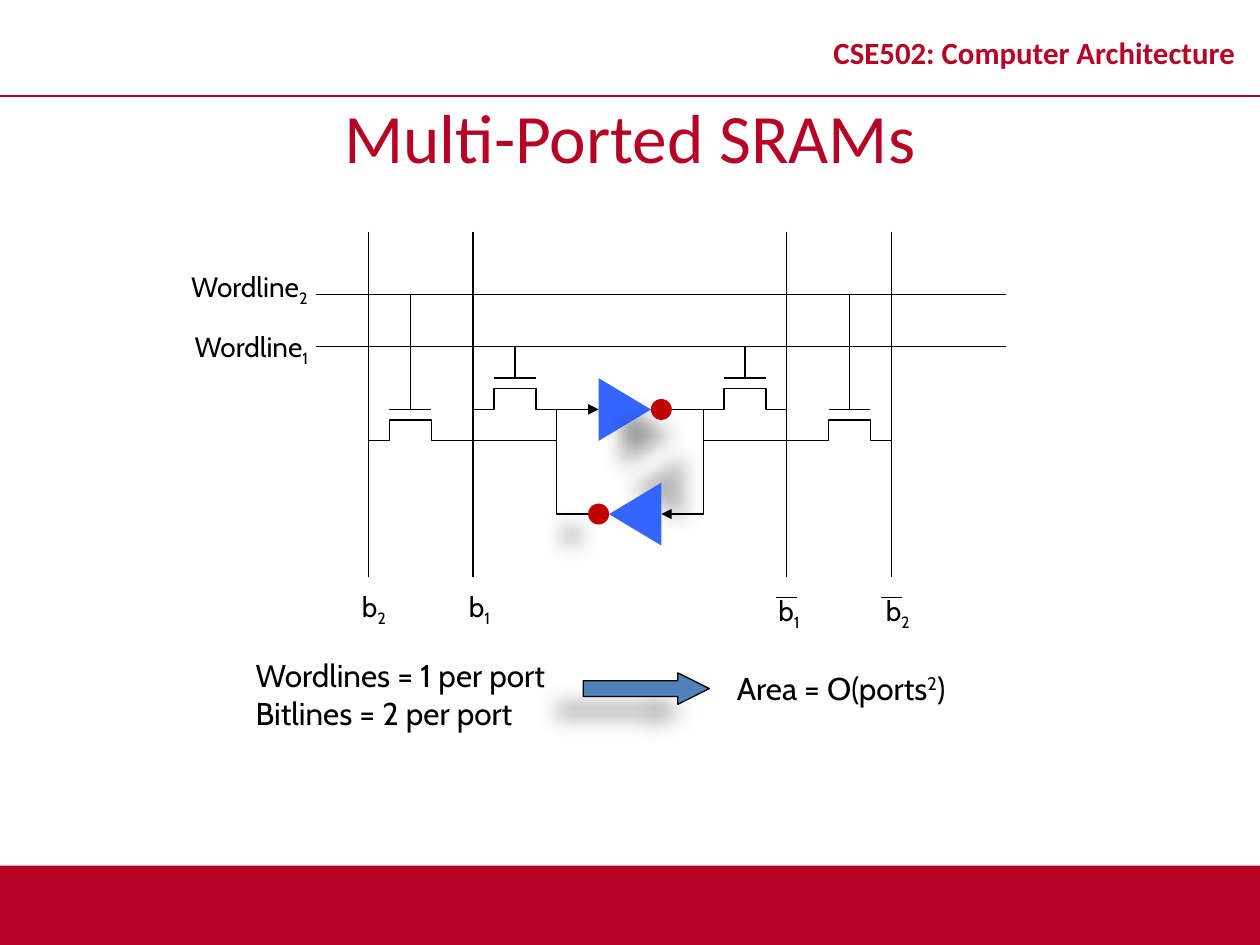
from lxml import etree
from pptx import Presentation
from pptx import util as u
from pptx.dml.color import RGBColor
from pptx.enum import shapes, text
from pptx.oxml.ns import qn

COLORS = {"crimson": "B60225", "black": "000000", "gate": "3366FF",
          "bubble": "C00000", "arrow": "4F81BD"}
UNIT = 0.083                    # one column or row of the circuit grid, in inches
CENTER_X, CENTER_Y = 5, 3.25    # grid origin: axis of symmetry, upper inverter
BITLINE_TOP, BITLINE_END = -17, 16
BUS = 7                         # column where both ports meet the storage cell
SHADOW = dict(alpha=28, blur=11.8, dist=19.7)


def color(name):
    return RGBColor.from_string(COLORS[name])


def x_at(col):
    return u.Inches(CENTER_X + col * UNIT)


def y_at(row):
    return u.Inches(CENTER_Y + row * UNIT)


class Diagram:
    """Current slide and the style of its elements."""

    def __init__(self, slide, line="black", weight=0.75):
        self.shapes = slide.shapes
        self.line, self.weight = line, weight

    def stroke(self, line, name=None):
        line.color.rgb = color(name or self.line)
        line.width = u.Pt(self.weight)

    def cast_shadow(self, sp, alpha, blur, dist, angle):
        effects = sp._element.spPr.find(qn("a:effectLst"))
        shadow = etree.SubElement(effects, qn("a:outerShdw"), blurRad=str(u.Pt(blur)),
                                  dist=str(u.Pt(dist)), dir=str(angle * 60000),
                                  algn="ctr", rotWithShape="0")
        clr = etree.SubElement(shadow, qn("a:srgbClr"), val=COLORS["black"])
        etree.SubElement(clr, qn("a:alpha"), val=str(alpha * 1000))

    def shape(self, kind, box, fill, outlined=False, rotation=0, **shadow):
        sp = self.shapes.add_shape(kind, *box)
        sp.rotation = rotation
        sp.fill.solid()
        sp.fill.fore_color.rgb = color(fill)
        if outlined:
            self.stroke(sp.line)
        else:
            sp.line.fill.background()
        sp.shadow.inherit = False
        self.cast_shadow(sp, **shadow)
        return sp

    def component(self, kind, col, row, width, height, fill, **style):
        """Circuit component centred on a grid point, sized in grid units."""
        box = (x_at(col - width / 2), y_at(row - height / 2),
               u.Inches(width * UNIT), u.Inches(height * UNIT))
        return self.shape(kind, box, fill, **SHADOW, **style)

    def connector(self, kind, ends, name=None):
        c = self.shapes.add_connector(kind, *ends)
        self.stroke(c.line, name)
        etree.SubElement(c._element.spPr, qn("a:effectLst"))
        return c

    def wire(self, col1, row1, col2, row2):
        ends = x_at(col1), y_at(row1), x_at(col2), y_at(row2)
        return self.connector(shapes.MSO_CONNECTOR.STRAIGHT, ends)

    def feedback(self, col1, row1, col2, row2, via):
        """Elbow arrow that runs out to column via and back."""
        ends = x_at(col1), y_at(row1), x_at(col2), y_at(row2)
        c = self.connector(shapes.MSO_CONNECTOR.ELBOW, ends)
        bend = round((via - col1) / (col2 - col1) * 100000)
        geom = c._element.spPr.find(qn("a:prstGeom"))
        guides = geom.find(qn("a:avLst"))
        if guides is None:
            guides = etree.SubElement(geom, qn("a:avLst"))
        etree.SubElement(guides, qn("a:gd"), name="adj1", fmla=f"val {bend}")
        line = c._element.spPr.find(qn("a:ln"))
        etree.SubElement(line, qn("a:tailEnd"), type="triangle")

    def transistor(self, col, row):
        """Gate bar at the given row with its channel below."""
        self.wire(col - 2, row, col + 2, row)
        steps = [(-4, 3), (-2, 3), (-2, 1), (2, 1), (2, 3), (4, 3)]
        points = [(x_at(col + dx), y_at(row + dy)) for dx, dy in steps]
        builder = self.shapes.build_freeform(*points[0])
        builder.add_line_segments(points[1:], close=False)
        sp = builder.convert_to_shape()
        sp.fill.background()
        sp.shadow.inherit = False
        self.stroke(sp.line)

    def text(self, paragraphs, box, size=16, font="Cabin", name="black", bold=False,
             align=text.PP_ALIGN.CENTER, anchor=text.MSO_ANCHOR.TOP, wrap=False, spacing=None):
        """Each paragraph is a list of (words, baseline shift in percent)."""
        tf = self.shapes.add_textbox(*box).text_frame
        tf.word_wrap = wrap
        tf.vertical_anchor = anchor
        for i, runs in enumerate(paragraphs):
            p = tf.paragraphs[0] if i == 0 else tf.add_paragraph()
            p.alignment = align
            if spacing:
                p.line_spacing = spacing
            for words, shift in runs:
                r = p.add_run()
                r.text = words
                r.font.size, r.font.name, r.font.bold = u.Pt(size), font, bold
                r.font.color.rgb = color(name)
                if shift:
                    r._r.get_or_add_rPr().set("baseline", str(shift * 1000))

    def label(self, words, port, col, row, width):
        box = x_at(col) - u.Inches(width / 2), y_at(row), u.Inches(width), u.Inches(0.37)
        self.text([[(words, 0), (str(port), -25)]], box)


def inches(*lengths):
    return [u.Inches(length) for length in lengths]


def draw_frame(d):
    d.shape(shapes.MSO_SHAPE.RECTANGLE, inches(0, 6.87, 10, 0.63), "crimson",
            alpha=35, blur=3.1, dist=1.8, angle=90)
    rule = d.connector(shapes.MSO_CONNECTOR.STRAIGHT, inches(0, 0.76, 10, 0.76), "crimson")
    rule.line.width = u.Pt(1)
    heading = dict(font="Calibri", name="crimson", anchor=text.MSO_ANCHOR.MIDDLE, wrap=True)
    d.text([[("CSE502: Computer Architecture", 0)]], inches(6.42, 0.13, 3.58, 0.63),
           size=17.6, bold=True, spacing=0.8, **heading)
    d.text([[("Multi-Ported SRAMs", 0)]], inches(0, 0.76, 10, 0.63), size=39.6, **heading)


def draw_cell(d):
    """Two cross-coupled inverters."""
    for side, row, rotation, angle in [(1, 0, 90, 49), (-1, 10, 270, 311)]:
        d.component(shapes.MSO_SHAPE.ISOSCELES_TRIANGLE, -0.5 * side, row, 6, 5, "gate",
                    rotation=rotation, angle=angle)
        d.component(shapes.MSO_SHAPE.OVAL, 3 * side, row, 2, 2, "bubble", angle=141)
        d.feedback(4 * side, row, 3 * side, 10 - row, via=BUS * side)


def draw_port(d, port, bitline, wordline, gate, word_col, word_row, bit_cols):
    d.wire(-30, wordline, 36, wordline)
    d.label("Wordline", port, word_col, word_row, 1.13)
    for side, bit_col, bit_row in zip((-1, 1), bit_cols, (16.6, 17)):
        middle = side * (bitline - 4)
        d.wire(side * bitline, BITLINE_TOP, side * bitline, BITLINE_END)
        d.wire(middle, wordline, middle, gate)
        d.transistor(middle, gate)
        if bitline - 8 > BUS:
            d.wire(side * BUS, gate + 3, side * (bitline - 8), gate + 3)
        d.label("b", port, bit_col, bit_row, 0.39)
    d.wire(bitline - 1, 18, bitline + 1, 18)


def draw_conclusion(d):
    d.text([[("Wordlines = 1 per port", 0)], [("Bitlines = 2 per port", 0)]],
           inches(1.93, 5.16, 2.62, 0.71), size=18, align=text.PP_ALIGN.LEFT)
    arrow = d.shape(shapes.MSO_SHAPE.RIGHT_ARROW, inches(4.63, 5.34, 1, 0.25), "arrow",
                    outlined=True, angle=141, **SHADOW)
    arrow.adjustments[1] = 1
    d.text([[("Area = O(ports", 0), ("2", 30), (")", 0)]],
           inches(5.68, 5.26, 1.99, 0.4), size=18)


def main():
    prs = Presentation()
    prs.slide_width, prs.slide_height = inches(10, 7.5)
    d = Diagram(prs.slides.add_slide(prs.slide_layouts[6]))
    draw_frame(d)
    draw_cell(d)
    draw_port(d, 1, bitline=15, wordline=-6, gate=-3,
              word_col=-36.2, word_row=-8.2, bit_cols=(-14.4, 15.2))
    draw_port(d, 2, bitline=25, wordline=-11, gate=0,
              word_col=-36.4, word_row=-14, bit_cols=(-24.5, 25.6))
    draw_conclusion(d)
    prs.save("out.pptx")


if __name__ == "__main__":
    main()
